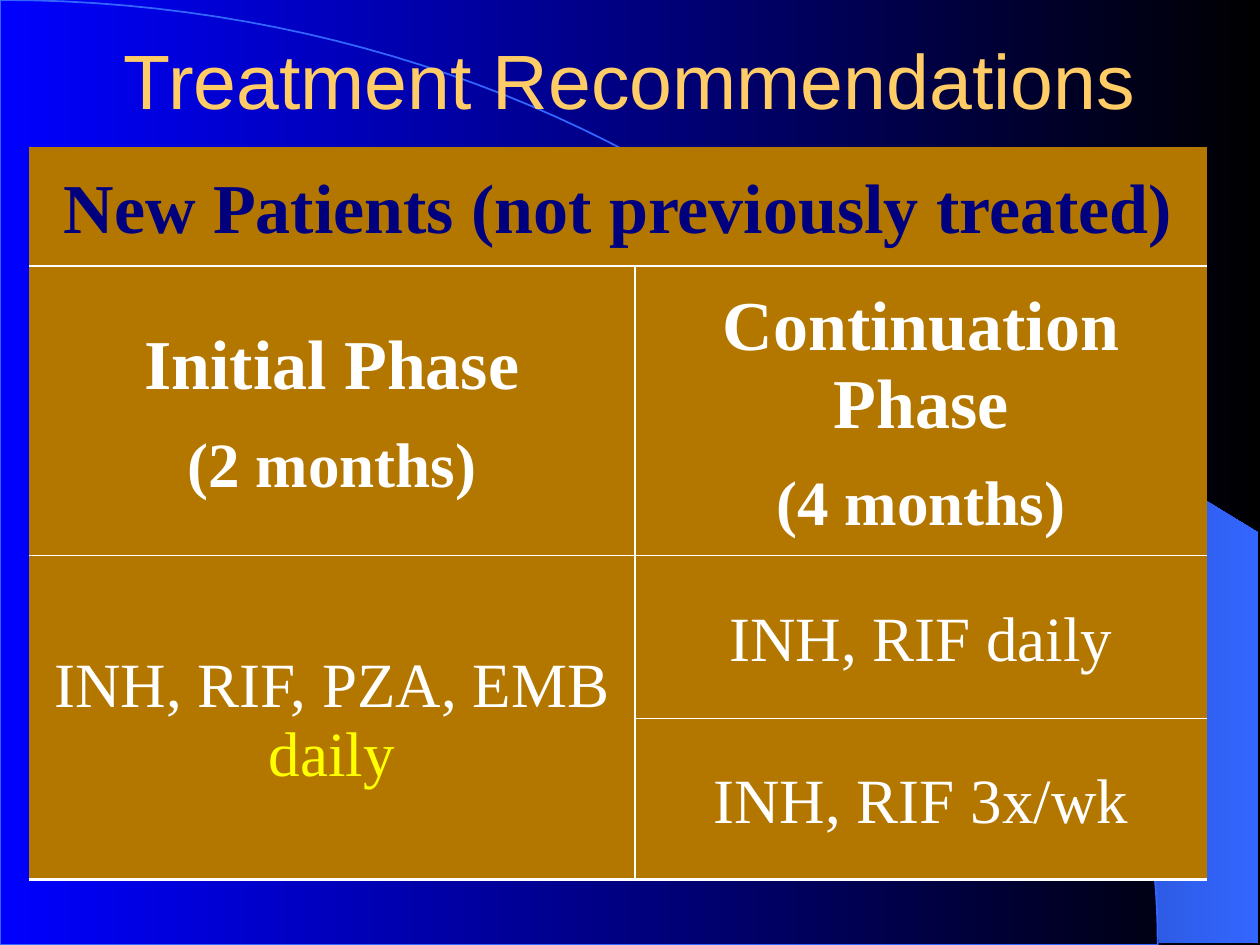
from lxml.etree import SubElement
from pptx import Presentation
from pptx.dml.color import RGBColor as Rgb
from pptx.enum.text import MSO_ANCHOR as Anchor, PP_ALIGN as Align
from pptx.oxml.ns import qn
from pptx.util import Cm, Pt

COLOURS = {
    "blue": "0000FF", "black": "000000", "navy": "182F76", "sky": "3366FF",
    "title": "FFCC66", "cell": "B37700", "heading": "00007F",
    "white": "FFFFFF", "yellow": "FFFF00",
}
WIDTH, HEIGHT = 25.4, 19.05
SERIF, SANS = "Times New Roman", "Arial"


def colour(name):
    return Rgb.from_string(COLOURS[name])


def quarter_arc(width, height, steps=60):
    """Points of a cubic curve from the top left to the bottom right."""
    points = []
    for step in range(steps + 1):
        t = step / steps
        u = 1 - t
        x = 3 * u * u * t * 0.55 * width + 3 * u * t * t * width + t ** 3 * width
        y = 3 * u * t * t * 0.45 * height + t ** 3 * height
        points.append((x, y))
    return points


class SlideBuilder:
    def __init__(self, slide):
        self.slide = slide

    def gradient(self, fill, first, last):
        fill.gradient()
        fill.gradient_angle = 0
        for stop, name in zip(fill.gradient_stops, (first, last)):
            stop.color.rgb = colour(name)

    def outline(self, points):
        (x, y), *rest = [(Cm(px), Cm(py)) for px, py in points]
        builder = self.slide.shapes.build_freeform(x, y)
        builder.add_line_segments(rest, close=True)
        shape = builder.convert_to_shape()
        shape.shadow.inherit = False
        return shape

    def paragraph(self, para, spans, size, font, bold=False):
        para.alignment = Align.CENTER
        para.font.size, para.font.name, para.font.bold = Pt(size), font, bold
        for text, name in spans:
            span = para.add_run()
            span.text = text
            span.font.color.rgb = colour(name)

    def title(self, text, left, top, width, height):
        box = self.slide.shapes.add_textbox(Cm(left), Cm(top), Cm(width), Cm(height))
        frame = box.text_frame
        frame.word_wrap = True
        frame.vertical_anchor = Anchor.MIDDLE
        self.paragraph(frame.paragraphs[0], [(text, "title")], 44, SANS)

    def table(self, left, top, columns, rows):
        frame = self.slide.shapes.add_table(
            len(rows), len(columns), Cm(left), Cm(top), Cm(sum(columns)), Cm(sum(rows)))
        table = frame.table
        table.first_row = table.horz_banding = False
        for column, width in zip(table.columns, columns):
            column.width = Cm(width)
        for row, height in zip(table.rows, rows):
            row.height = Cm(height)
        return table

    def borders(self, cell, **widths):
        properties = cell._tc.get_or_add_tcPr()
        for side in "LRTB":
            width = widths[side]
            line = SubElement(properties, qn(f"a:ln{side}"), w=str(Pt(width)))
            if width:
                fill = SubElement(line, qn("a:solidFill"))
                SubElement(fill, qn("a:srgbClr"), val=COLOURS["white"])
            else:
                SubElement(line, qn("a:noFill"))

    def cell(self, cell, lines):
        cell.fill.solid()
        cell.fill.fore_color.rgb = colour("cell")
        cell.vertical_anchor = Anchor.MIDDLE
        cell.margin_bottom = 0
        for index, (spans, size, bold) in enumerate(lines):
            frame = cell.text_frame
            para = frame.add_paragraph() if index else frame.paragraphs[0]
            if index:
                para.space_before = Pt(15.2)
            self.paragraph(para, spans, size, SERIF, bold)


def main():
    deck = Presentation()
    deck.slide_width, deck.slide_height = Cm(WIDTH), Cm(HEIGHT)
    slide = deck.slides.add_slide(deck.slide_layouts[6])
    page = SlideBuilder(slide)

    # Background with a swoosh and a large arc
    page.gradient(slide.background.fill, "blue", "black")
    swoosh = page.outline([
        (23.37, 19), (25.37, 19.02), (25.37, 10.74), (14.96, 4.39), (15.85, 5.05),
        (16.59, 5.64), (17.4, 6.35), (18.19, 7.11), (19.35, 8.38), (20.4, 9.75),
        (21.13, 10.95), (21.79, 12.17), (22.3, 13.41), (22.68, 14.53),
        (22.94, 15.47), (23.19, 16.66), (23.29, 17.68)])
    page.gradient(swoosh.fill, "navy", "sky")
    swoosh.line.fill.background()
    arc = page.outline(quarter_arc(23.34, HEIGHT) + [(0, HEIGHT)])
    arc.fill.background()
    arc.line.color.rgb = colour("sky")
    arc.line.width = Pt(1)

    page.title("Treatment Recommendations", 1.9, 0, 21.6, 3.18)

    # Treatment table: lines between cells, a thick one at the foot
    table = page.table(0.58, 2.97, [12.22, 11.53], [2.39, 5.84, 3.28, 3.25])
    table.cell(0, 0).merge(table.cell(0, 1))
    table.cell(2, 0).merge(table.cell(3, 0))
    for row in range(4):
        for column in range(2):
            inner = 1 if row else 0
            at_foot = row == 3 or (row, column) == (2, 0)
            inside_merge = (row, column) == (3, 0)
            page.borders(
                table.cell(row, column),
                L=inner * column, R=inner * (1 - column),
                T=0 if inside_merge else inner, B=2.25 if at_foot else 1)

    contents = {
        (0, 0): [([("New Patients (not previously treated)", "heading")], 40, True)],
        (1, 0): [([("Initial Phase", "white")], 40, True),
                 ([("(2 months)", "white")], 36, True)],
        (1, 1): [([("Continuation Phase", "white")], 40, True),
                 ([("(4 months)", "white")], 36, True)],
        (2, 0): [([("INH, RIF, PZA, EMB ", "white"), ("daily", "yellow")], 36, False)],
        (2, 1): [([("INH, RIF daily", "white")], 36, False)],
        (3, 1): [([("INH, RIF 3x/wk", "white")], 36, False)],
    }
    for (row, column), lines in contents.items():
        page.cell(table.cell(row, column), lines)

    deck.save("out.pptx")


if __name__ == "__main__":
    main()
